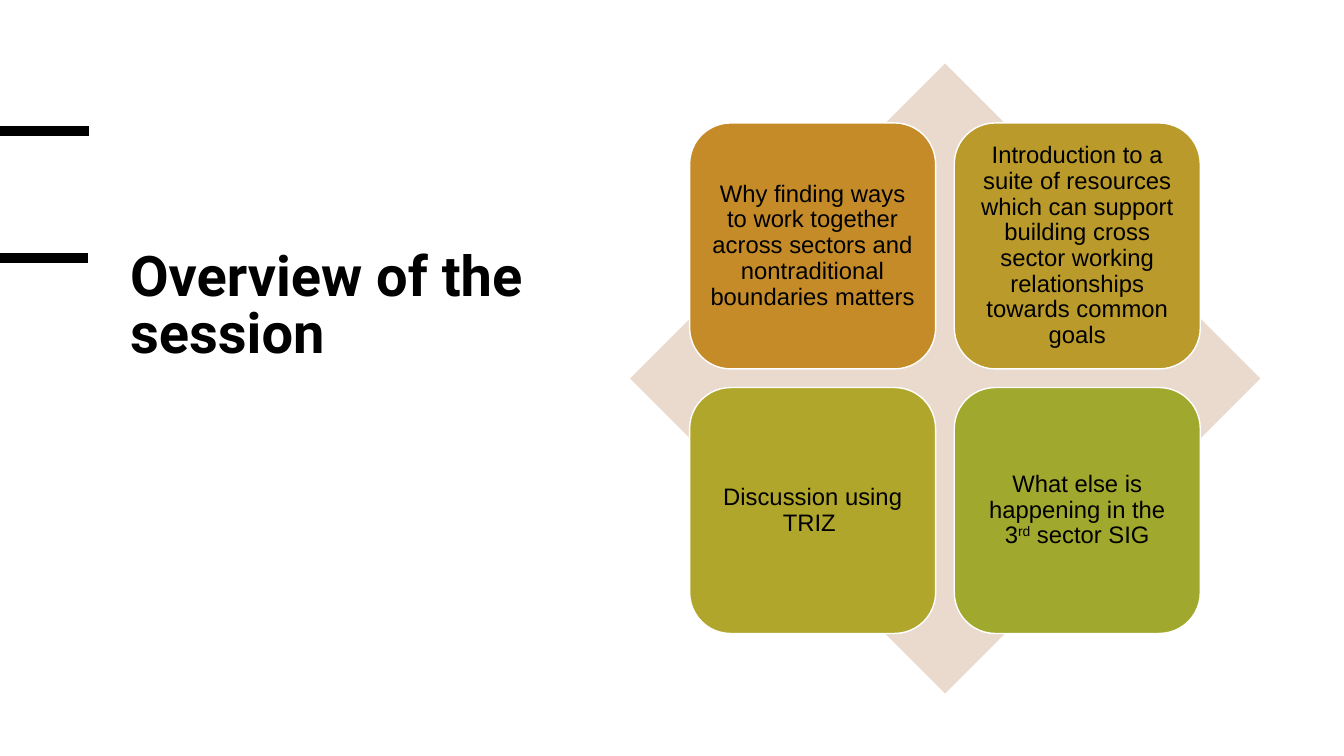
import pptx
import pptx.dml.color
import pptx.enum.shapes
import pptx.enum.text
import pptx.oxml.ns
import pptx.util
from lxml import etree
from pptx.dml.color import RGBColor
from pptx.util import Inches

BLACK = RGBColor(0x00, 0x00, 0x00)
WHITE = RGBColor(0xFF, 0xFF, 0xFF)
SAND = RGBColor(0xEA, 0xDA, 0xCD)
AMBER = RGBColor(0xC4, 0x8B, 0x28)
OCHRE = RGBColor(0xBA, 0x9A, 0x2A)
OLIVE = RGBColor(0xB1, 0xA6, 0x2C)
MOSS = RGBColor(0xA1, 0xA8, 0x2E)

# Each topic is a fill and its spans of text; "rd" is raised
TOPICS = [
    (AMBER, ["Why finding ways to work together across sectors and "
             "nontraditional boundaries matters"]),
    (OCHRE, ["Introduction to a suite of resources which can support building "
             "cross sector working relationships towards common goals"]),
    (OLIVE, ["Discussion using TRIZ "]),
    (MOSS, ["What else is happening in the 3", "rd", " sector SIG"]),
]
RAISED = "rd"
GRID_LEFT, GRID_TOP = 6.84, 1.22
CARD_SIZE, CARD_STEP = 2.44, 2.625


def set_font(font, name, size, bold=False):
    font.name = name
    font.size = pptx.util.Pt(size)
    font.bold = bold
    font.color.rgb = BLACK


def add_title(page, text):
    title = page.shapes.title
    title.left, title.top = Inches(1.19), Inches(2.44)
    title.width, title.height = Inches(4.16), Inches(3.67)
    frame = title.text_frame
    frame.text = text
    frame.word_wrap = True
    frame.auto_size = pptx.enum.text.MSO_AUTO_SIZE.NONE
    frame.vertical_anchor = pptx.enum.text.MSO_ANCHOR.TOP
    para = frame.paragraphs[0]
    para.alignment = pptx.enum.text.PP_ALIGN.LEFT
    para.line_spacing = 0.85
    set_font(para.runs[0].font, "Roboto", 40, bold=True)


def add_bar(page, left, top):
    bar = page.shapes.add_connector(
        pptx.enum.shapes.MSO_CONNECTOR.STRAIGHT,
        Inches(left), Inches(top), Inches(left + 0.88), Inches(top))
    bar.line.color.rgb = BLACK
    bar.line.width = pptx.util.Pt(6.75)
    etree.SubElement(bar._element.spPr, pptx.oxml.ns.qn("a:effectLst"))


def add_block(page, kind, left, top, size, fill):
    block = page.shapes.add_shape(
        kind, Inches(left), Inches(top), Inches(size), Inches(size))
    block.shadow.inherit = False
    block.fill.solid()
    block.fill.fore_color.rgb = fill
    block.line.fill.background()
    return block


def add_card(page, left, top, fill, spans):
    card = add_block(page, pptx.enum.shapes.MSO_SHAPE.ROUNDED_RECTANGLE,
                     left, top, CARD_SIZE, fill)
    card.line.color.rgb = WHITE
    card.line.width = pptx.util.Pt(1)
    frame = card.text_frame
    frame.word_wrap = True
    frame.vertical_anchor = pptx.enum.text.MSO_ANCHOR.MIDDLE
    frame.margin_left = frame.margin_right = Inches(0.07)
    frame.margin_top = frame.margin_bottom = Inches(0.07)
    para = frame.paragraphs[0]
    para.alignment = pptx.enum.text.PP_ALIGN.CENTER
    para.line_spacing = 0.9
    for text in spans:
        span = para.add_run()
        span.text = text
        set_font(span.font, "Arial", 17)
        if text == RAISED:
            span._r.get_or_add_rPr().set("baseline", "30000")


def main():
    deck = pptx.Presentation()
    deck.slide_width, deck.slide_height = Inches(13.33), Inches(7.5)
    page = deck.slides.add_slide(deck.slide_layouts[5])

    # Title between the accent bars and the diagram
    add_bar(page, 0, 1.3)
    add_title(page, "Overview of the session")
    add_bar(page, -0.01, 2.56)

    # Diamond with a two by two grid of topics
    add_block(page, pptx.enum.shapes.MSO_SHAPE.DIAMOND, 6.25, 0.63, 6.25, SAND)
    for index, (fill, spans) in enumerate(TOPICS):
        row, column = divmod(index, 2)
        add_card(page, GRID_LEFT + column * CARD_STEP,
                 GRID_TOP + row * CARD_STEP, fill, spans)

    deck.save("out.pptx")


if __name__ == "__main__":
    main()
